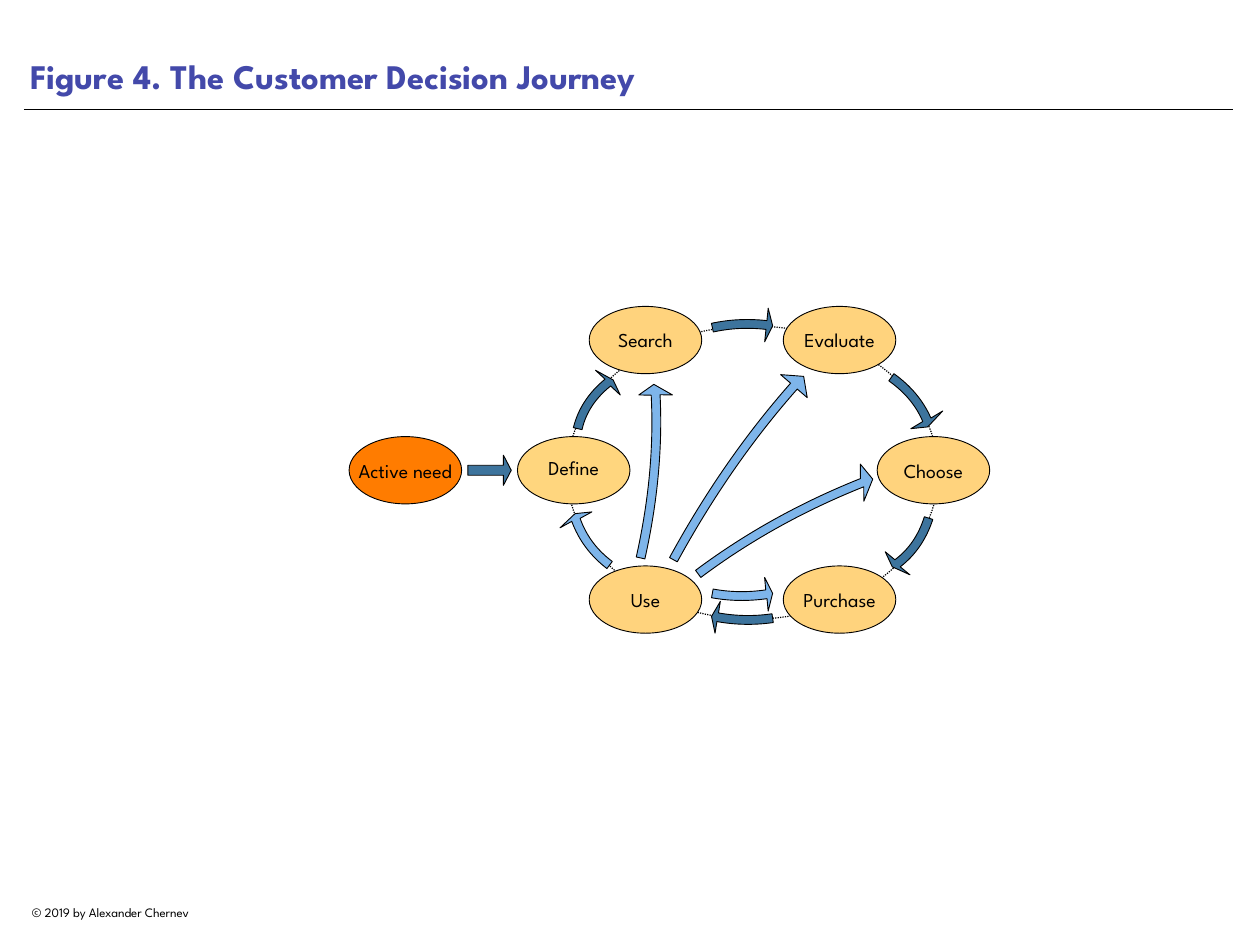
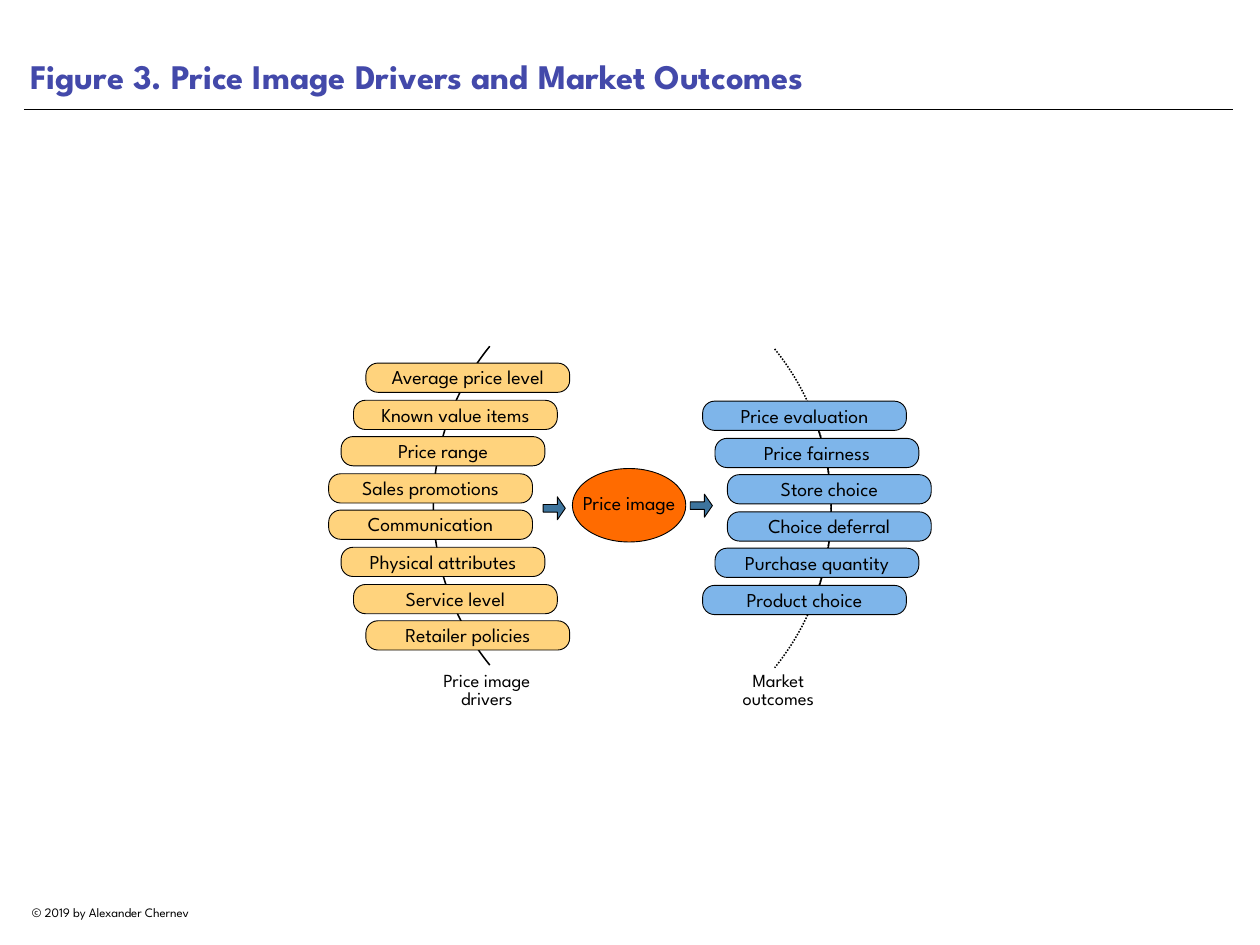
from math import asin, cos, hypot, sin, tan

from lxml import etree
from pptx import Presentation
from pptx.dml.color import RGBColor
from pptx.enum.dml import MSO_LINE
from pptx.enum.shapes import MSO_CONNECTOR, MSO_SHAPE
from pptx.enum.text import MSO_ANCHOR, PP_ALIGN
from pptx.oxml.ns import qn
from pptx.util import Pt

PX = 9144
FONT = "League Spartan"
BLACK = RGBColor(0x00, 0x00, 0x00)
INDIGO = RGBColor(0x43, 0x49, 0xAA)
SAND = RGBColor(0xFF, 0xD3, 0x7D)
PALE_SAND = RGBColor(0xFF, 0xD6, 0x7E)
ORANGE = RGBColor(0xFF, 0x7C, 0x00)
DEEP_ORANGE = RGBColor(0xFF, 0x6B, 0x00)
STEEL = RGBColor(0x3D, 0x74, 0x9D)
SKY = RGBColor(0x7E, 0xB5, 0xEA)
OVAL, ROUNDED, ARROW = MSO_SHAPE.OVAL, MSO_SHAPE.ROUNDED_RECTANGLE, MSO_SHAPE.RIGHT_ARROW
STRAIGHT = MSO_CONNECTOR.STRAIGHT
DOTS = MSO_LINE.ROUND_DOT
LEFT, CENTER = PP_ALIGN.LEFT, PP_ALIGN.CENTER
MIDDLE, BOTTOM = MSO_ANCHOR.MIDDLE, MSO_ANCHOR.BOTTOM


def paint(sp, fill=None, width=0.75, dash=None, curves=()):
    sp.shadow.inherit = False
    if fill is None:
        sp.fill.background()
    else:
        sp.fill.solid()
        sp.fill.fore_color.rgb = fill
    sp.line.color.rgb = BLACK
    sp.line.width = Pt(width)
    if dash is not None:
        sp.line.dash_style = dash
    segments = list(sp._element.iter(qn("a:lnTo")))
    for first in curves:
        bezier = etree.Element(qn("a:cubicBezTo"))
        segments[first].addprevious(bezier)
        for segment in segments[first:first + 3]:
            bezier.append(segment[0])
            segment.getparent().remove(segment)


def write(sp, text, size=16, color=BLACK, bold=False, align=CENTER,
          anchor=MIDDLE, inset=0, spacing=None, wrap=True):
    tf = sp.text_frame
    tf.word_wrap = wrap
    tf.vertical_anchor = anchor
    tf.margin_left = tf.margin_right = tf.margin_top = tf.margin_bottom = inset * PX
    p = tf.paragraphs[0]
    p.text = text
    p.alignment = align
    p.line_spacing = spacing
    p.font.name = FONT
    p.font.size = Pt(size)
    p.font.bold = bold
    p.font.color.rgb = color


prs = Presentation()
prs.slide_width, prs.slide_height = 1422 * PX, 1067 * PX
blank = prs.slide_layouts[6]

slides = []
for title in ("Figure 4. The Customer Decision Journey",
              "Figure 3. Price Image Drivers and Market Outcomes"):
    s = prs.slides.add_slide(blank)
    sp = s.shapes.add_textbox(27 * PX, 1016 * PX, 234 * PX, 28 * PX)
    write(sp, "© 2019 by Alexander Chernev", 10.5, align=LEFT, inset=9)
    rule = s.shapes.add_connector(STRAIGHT, 27 * PX, 124 * PX, 1392 * PX, 124 * PX)
    rule.line.color.rgb = BLACK
    rule.line.width = Pt(0.5)
    etree.SubElement(rule._element.spPr, qn("a:effectLst"))
    sp = s.shapes.add_textbox(27 * PX, 1 * PX, 1364 * PX, 115 * PX)
    write(sp, title, 28, INDIGO, True, LEFT, BOTTOM, 7)
    slides.append(s)

journey, price = slides

s = journey
ring = s.shapes.add_shape(OVAL, 640 * PX, 368 * PX, 419 * PX, 331 * PX)
paint(ring, width=1, dash=DOTS)

for text, x, y, fill, spacing in (
        ("Active need", 394, 493, ORANGE, None),
        ("Define", 584, 493, PALE_SAND, 0.8),
        ("Search", 665, 346, SAND, None),
        ("Evaluate", 884, 346, SAND, None),
        ("Choose", 990, 493, SAND, None),
        ("Purchase", 884, 639, SAND, None),
        ("Use", 665, 639, SAND, None)):
    sp = s.shapes.add_shape(OVAL, x * PX, y * PX, 127 * PX, 76 * PX)
    paint(sp, fill)
    write(sp, text, spacing=spacing, wrap=False)

sp = s.shapes.add_shape(ARROW, 528 * PX, 514 * PX, 49 * PX, 34 * PX)
sp.adjustments[0], sp.adjustments[1] = 0.33, 0.26
paint(sp, STEEL)

for fill, tail, mid, base, barb, tip in (
        (STEEL, (652, 484), (664, 456), (686, 432), (700, 446), (692, 429)),
        (STEEL, (804, 370), (834, 366), (865, 367), (863, 386), (872, 368)),
        (STEEL, (1006, 426), (1030, 448), (1046, 474), (1028, 484), (1047, 482)),
        (STEEL, (1048, 585), (1034, 614), (1013, 636), (999, 623), (1007, 640)),
        (STEEL, (872, 698), (841, 700), (810, 697), (813, 679), (803, 696)),
        (SKY, (804, 670), (834, 673), (865, 671), (867, 690), (872, 670)),
        (SKY, (688, 638), (665, 615), (650, 587), (668, 578), (649, 580)),
        (SKY, (723, 630), (738, 536), (740, 446), (759, 446), (738, 434)),
        (SKY, (760, 632), (824, 528), (896, 436), (911, 449), (907, 425)),
        (SKY, (788, 648), (876, 591), (973, 545), (975, 566), (985, 541))):
    bend = [2 * m - (a + b) / 2 for a, m, b in zip(tail, mid, base)]
    sides = []
    for half in (5, -5):
        start, control, end = (
            (x - half * dy / hypot(dx, dy), y + half * dx / hypot(dx, dy))
            for (x, y), dx, dy in (
                (tail, bend[0] - tail[0], bend[1] - tail[1]),
                (bend, base[0] - tail[0], base[1] - tail[1]),
                (base, base[0] - bend[0], base[1] - bend[1])))
        handles = [tuple((a + 2 * c) / 3 for a, c in zip(p, control)) for p in (start, end)]
        sides.append([start, *handles, end])
    other_barb = tuple(2 * b - a for a, b in zip(barb, base))
    outline = sides[0] + [barb, tip, other_barb] + sides[1][::-1]
    points = [(x * PX, y * PX) for x, y in outline]
    fb = s.shapes.build_freeform(*points[0])
    fb.add_line_segments(points[1:], close=True)
    paint(fb.convert_to_shape(), fill, curves=(0, 7))

s = price
RADIUS = 286
for cx, cy, side, reach, dash in (
        (652, 574, 1, 180, DOTS),
        (652, 575, 1, 108, None),
        (775, 571, -1, 180, None)):
    sweep = asin(reach / RADIUS)
    x, y = RADIUS * cos(sweep), RADIUS * sin(sweep)
    k = 4 / 3 * tan(sweep / 2)
    arc = ((x, -y), (x + k * y, k * x - y), (x + k * y, y - k * x), (x, y))
    points = [((cx + side * dx) * PX, (cy + dy) * PX) for dx, dy in arc]
    fb = s.shapes.build_freeform(*points[0])
    fb.add_line_segments(points[1:], close=False)
    paint(fb.convert_to_shape(), width=1.25, dash=dash, curves=(0,))

drivers = ("Average price level", "Known value items", "Price range", "Sales promotions",
           "Communication", "Physical attributes", "Service level", "Retailer policies")
outcomes = ("Price evaluation", "Price fairness", "Store choice",
            "Choice deferral", "Purchase quantity", "Product choice")
for labels, left, top, step, fill in ((drivers, 413, 410, -14, SAND),
                                      (outcomes, 793, 453, 14, SKY)):
    for i, text in enumerate(labels):
        x = left + step * min(i, len(labels) - 1 - i)
        y = top + round(41.6 * i)
        sp = s.shapes.add_shape(ROUNDED, x * PX, y * PX, 230 * PX, 33 * PX)
        sp.adjustments[0] = 0.41
        paint(sp, fill)
        write(sp, text, anchor=BOTTOM, spacing=0.8)

sp = s.shapes.add_shape(OVAL, 646 * PX, 529 * PX, 128 * PX, 83 * PX)
paint(sp, DEEP_ORANGE)
write(sp, "Price image", spacing=0.8, wrap=False)

for x, y in ((613, 561), (779, 558)):
    sp = s.shapes.add_shape(ARROW, x * PX, y * PX, 25 * PX, 26 * PX)
    sp.adjustments[0], sp.adjustments[1] = 0.33, 0.36
    paint(sp, STEEL)

for text, x in (("Price image drivers", 481), ("Market outcomes", 810)):
    sp = s.shapes.add_textbox(x * PX, 752 * PX, 137 * PX, 57 * PX)
    write(sp, text, 15, inset=7, spacing=0.8)

prs.save("out.pptx")
